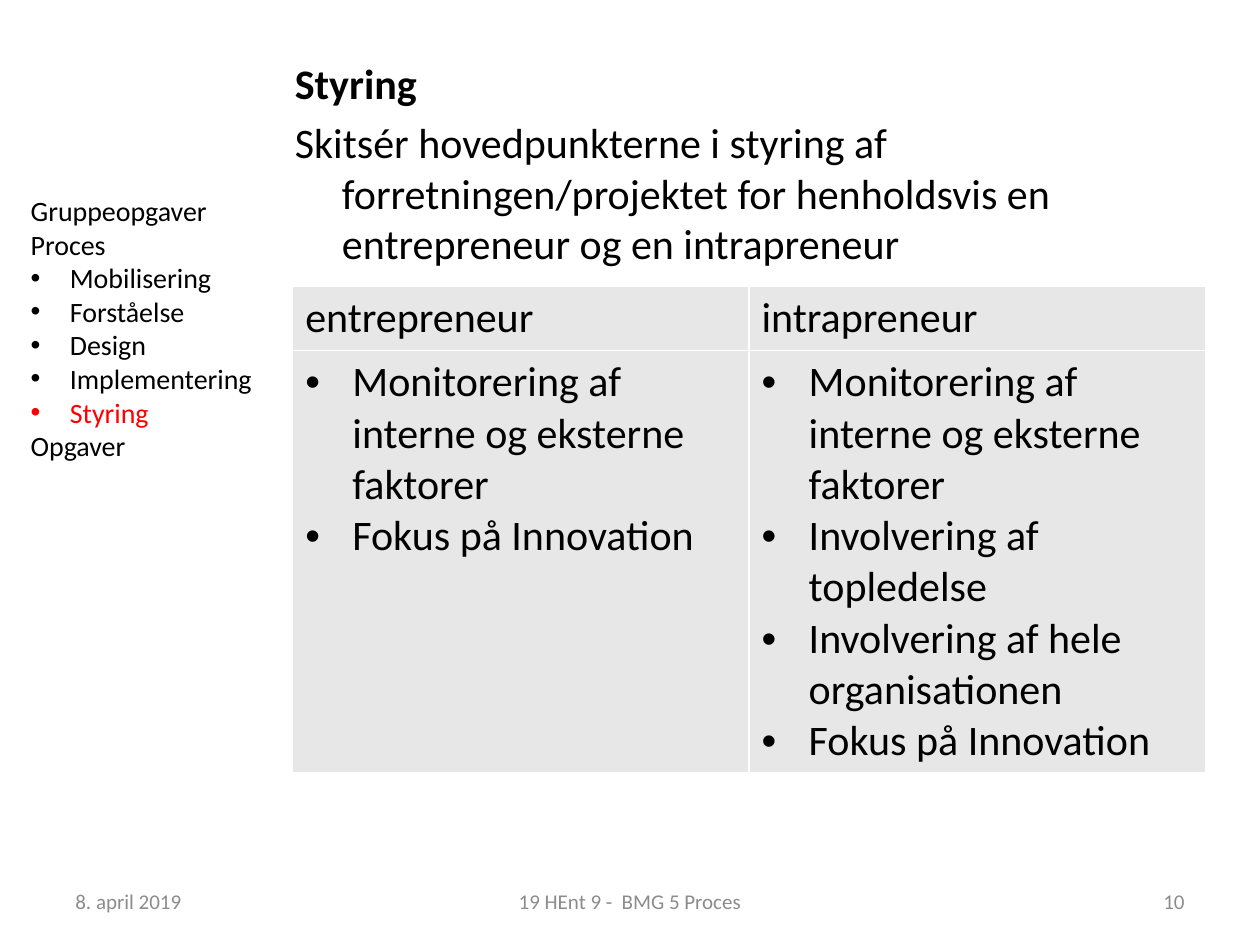
from lxml.etree import SubElement
from pptx import Presentation
from pptx.dml.color import RGBColor
from pptx.enum.text import MSO_ANCHOR, PP_ALIGN
from pptx.oxml.ns import qn
from pptx.util import Cm, Pt

COLORS = {"text": "000000", "accent": "FF0000", "footer": "8C8C8C", "cell": "E7E7E7"}
FONT = "Calibri"


def format_paragraph(paragraph, text, size, color="text", bold=False, indent=None, bullet=False):
    """Write text with its font, and a hanging indent in cm with or without a bullet."""
    run = paragraph.add_run()
    run.text = text
    for name, value in {"name": FONT, "size": Pt(size), "bold": bold}.items():
        setattr(run.font, name, value)
    run.font.color.rgb = RGBColor.from_string(COLORS[color])
    properties = paragraph._p.get_or_add_pPr()
    if indent:
        properties.set("marL", str(Cm(indent)))
        properties.set("indent", str(-Cm(indent)))
    if bullet:
        SubElement(properties, qn("a:buFont"), typeface="Arial")
        SubElement(properties, qn("a:buChar"), char="•")
    else:
        SubElement(properties, qn("a:buNone"))


def fill_frame(frame, lines):
    """Write one paragraph for each dict of format_paragraph values."""
    for index, line in enumerate(lines):
        paragraph = frame.add_paragraph() if index else frame.paragraphs[0]
        format_paragraph(paragraph, **line)


def add_text(slide, left, top, width, height, lines):
    box = slide.shapes.add_textbox(Cm(left), Cm(top), Cm(width), Cm(height))
    box.text_frame.word_wrap = True
    fill_frame(box.text_frame, lines)
    return box.text_frame


def place_body(slide, left, top, width, height):
    body = slide.placeholders[1]
    box = {"left": left, "top": top, "width": width, "height": height}
    for name, value in box.items():
        setattr(body, name, Cm(value))
    fill_frame(body.text_frame, [
        {"text": "Styring", "size": 24, "bold": True, "indent": 0.95},
        {"text": "Skitsér hovedpunkterne i styring af forretningen/projektet "
                 "for henholdsvis en entrepreneur og en intrapreneur",
         "size": 24, "indent": 0.95},
    ])
    for paragraph in body.text_frame.paragraphs:
        paragraph.space_before = Pt(4.8)


def add_comparison(slide, left, top, width, row_heights, columns):
    """Add a table with one column for each heading and its bullet points."""
    table = slide.shapes.add_table(
        2, len(columns), Cm(left), Cm(top), Cm(width), Cm(sum(row_heights))).table
    for name in ("first_row", "horz_banding"):
        setattr(table, name, False)
    for row, height in zip(table.rows, row_heights):
        row.height = Cm(height)
    for column, (heading, points) in enumerate(columns.items()):
        fill_frame(table.cell(0, column).text_frame, [{"text": heading, "size": 24}])
        fill_frame(table.cell(1, column).text_frame, [
            {"text": point, "size": 24, "indent": 0.95, "bullet": True} for point in points])
    for cell in table.iter_cells():
        cell.fill.solid()
        cell.fill.fore_color.rgb = RGBColor.from_string(COLORS["cell"])


def add_agenda(slide, left, top, width, height, current):
    steps = ["Mobilisering", "Forståelse", "Design", "Implementering", "Styring"]
    lines = [{"text": text, "size": 16} for text in ("Gruppeopgaver", "Proces")]
    lines += [{"text": step, "size": 16, "indent": 0.79, "bullet": True,
               "color": "accent" if step == current else "text"} for step in steps]
    lines.append({"text": "Opgaver", "size": 16})
    add_text(slide, left, top, width, height, lines)


def add_footer(slide, left, top, width, height):
    side, middle = 5.93, 8.04
    parts = [
        ("8. april 2019", left, side, PP_ALIGN.LEFT),
        ("19 HEnt 9 -  BMG 5 Proces", left + (width - middle) / 2, middle, PP_ALIGN.CENTER),
        ("10", left + width - side, side, PP_ALIGN.RIGHT),
    ]
    for text, part_left, part_width, alignment in parts:
        frame = add_text(slide, part_left, top, part_width, height,
                         [{"text": text, "size": 12, "color": "footer"}])
        frame.vertical_anchor = MSO_ANCHOR.MIDDLE
        frame.paragraphs[0].alignment = alignment


def main():
    presentation = Presentation()
    presentation.slide_width, presentation.slide_height = Cm(25.4), Cm(19.05)
    slide = presentation.slides.add_slide(presentation.slide_layouts.get_by_name("Title and Content"))
    title = slide.shapes.title.element
    title.getparent().remove(title)

    place_body(slide, 5.69, 1.04, 19, 16.33)
    monitoring = "Monitorering af interne og eksterne faktorer"
    innovation = "Fokus på Innovation"
    add_comparison(slide, 5.9, 5.78, 18.4, (1.28, 8.48), {
        "entrepreneur": [monitoring, innovation],
        "intrapreneur": [monitoring, "Involvering af topledelse",
                         "Involvering af hele organisationen", innovation],
    })
    add_agenda(slide, 0.37, 3.78, 5.56, 6.5, current="Styring")
    add_footer(slide, 1.27, 17.66, 22.86, 1.01)
    presentation.save("out.pptx")


if __name__ == "__main__":
    main()
